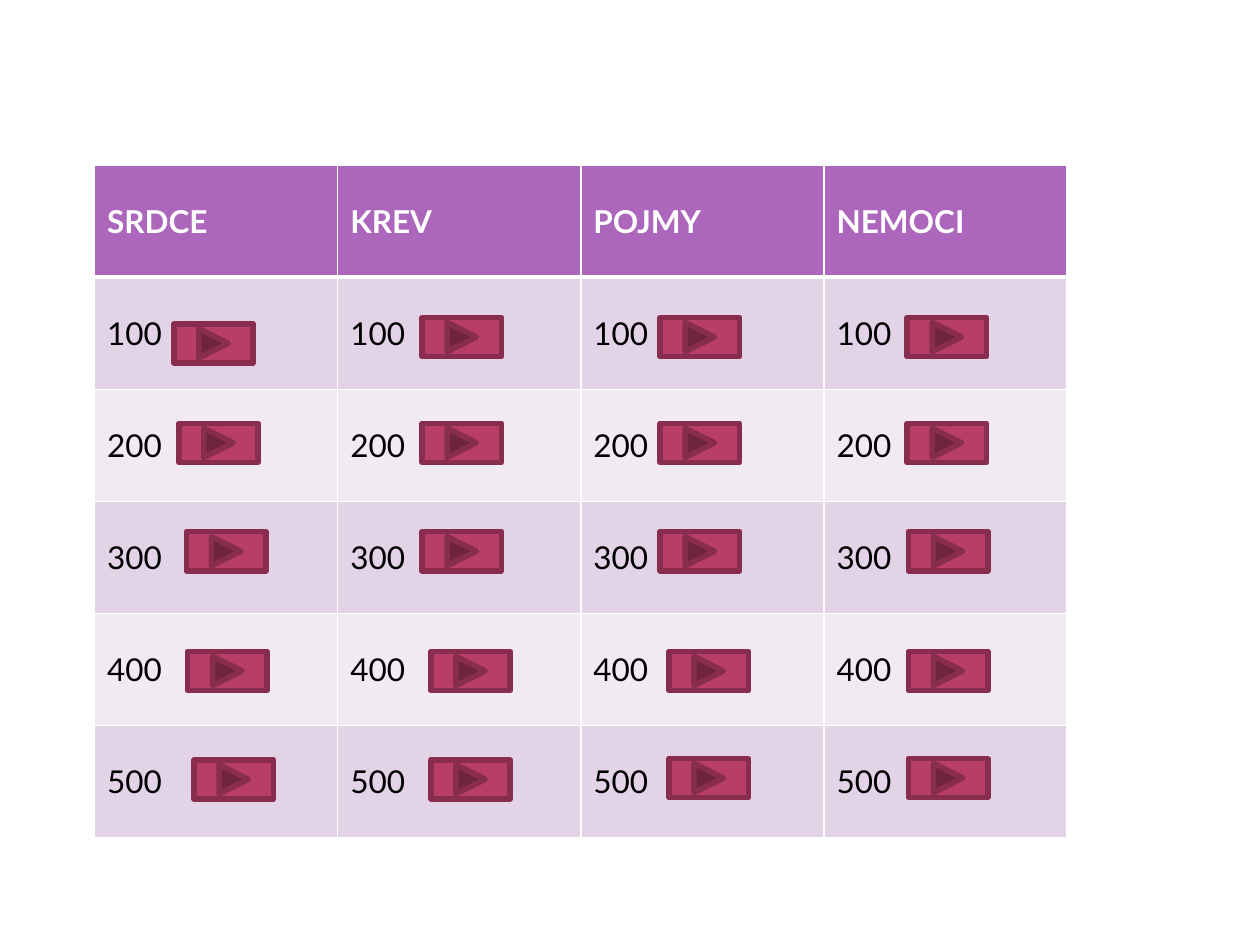
from lxml import etree
from pptx import Presentation
from pptx.dml.color import RGBColor
from pptx.enum.shapes import MSO_SHAPE
from pptx.enum.text import MSO_ANCHOR
from pptx.oxml.ns import qn
from pptx.util import Inches, Pt

FORWARD_BUTTON = MSO_SHAPE.ACTION_BUTTON_FORWARD_OR_NEXT
MIDDLE = MSO_ANCHOR.MIDDLE
BLANK_LAYOUT = 6

COLORS = {
    "header": "AC66BB",
    "band_dark": "E3D3E7",
    "band_light": "F1EAF3",
    "white": "FFFFFF",
    "black": "000000",
    "button": "B83D68",
    "button_line": "882D4D",
}
TOPICS = ["SRDCE", "KREV", "POJMY", "NEMOCI"]
POINTS = [100, 200, 300, 400, 500]
TABLE_LEFT, TABLE_TOP = 0.75, 1.31
COLUMN_WIDTH, ROW_HEIGHT = 1.93, 0.89
BUTTON_WIDTH, BUTTON_HEIGHT = 0.63, 0.31
BUTTON_LEFTS = [
    [1.38, 1.42, 1.48, 1.49, 1.54],
    [3.35, 3.35, 3.35, 3.42, 3.42],
    [5.24, 5.24, 5.24, 5.31, 5.31],
    [7.2, 7.2, 7.21, 7.21, 7.21],
]
BUTTON_TOPS = [
    [2.57, 3.36, 4.22, 5.17, 6.03],
    [2.52, 3.36, 4.22, 5.17, 6.03],
    [2.52, 3.36, 4.22, 5.17, 6.02],
    [2.52, 3.36, 4.22, 5.17, 6.02],
]


def color(name):
    """Return the named colour as an RGBColor."""
    return RGBColor.from_string(COLORS[name])


def set_borders(cell, widths):
    """Draw white borders of the given point widths, keyed by side."""
    properties = cell._tc.get_or_add_tcPr()
    for side, width in widths.items():
        line = etree.SubElement(properties, qn(f"a:ln{side}"), w=str(Pt(width)))
        fill = etree.SubElement(line, qn("a:solidFill"))
        etree.SubElement(fill, qn("a:srgbClr"), val=COLORS["white"])


def format_cell(cell, text, row):
    """Write and style one cell according to its row."""
    is_header = row == 0
    set_borders(cell, {"L": 1, "R": 1, "T": 3 if row == 1 else 1, "B": 3 if is_header else 1})
    band = "band_dark" if row % 2 else "band_light"
    cell.fill.solid()
    cell.fill.fore_color.rgb = color("header" if is_header else band)
    cell.vertical_anchor = MIDDLE
    cell.text = text
    font = cell.text_frame.paragraphs[0].runs[0].font
    for name, value in {"name": "Lato", "size": Pt(18), "bold": is_header}.items():
        setattr(font, name, value)
    font.color.rgb = color("white" if is_header else "black")


def add_score_table(slide):
    """Add the board with one column per topic and one row per score."""
    rows = [TOPICS] + [[str(score)] * len(TOPICS) for score in POINTS]
    table = slide.shapes.add_table(
        len(rows), len(TOPICS), Inches(TABLE_LEFT), Inches(TABLE_TOP),
        Inches(COLUMN_WIDTH * len(TOPICS)), Inches(ROW_HEIGHT * len(rows)),
    ).table
    table.horz_banding = False
    for row, texts in enumerate(rows):
        for column, text in enumerate(texts):
            format_cell(table.cell(row, column), text, row)


def add_button(slide, left, top):
    """Add one forward button."""
    shape = slide.shapes.add_shape(
        FORWARD_BUTTON, Inches(left), Inches(top), Inches(BUTTON_WIDTH), Inches(BUTTON_HEIGHT)
    )
    shape.shadow.inherit = False
    shape.fill.solid()
    shape.fill.fore_color.rgb = color("button")
    shape.line.color.rgb = color("button_line")
    shape.line.width = Pt(3.15)


def main():
    """Build the quiz board slide."""
    presentation = Presentation()
    presentation.slide_width, presentation.slide_height = Inches(10), Inches(7.5)
    slide = presentation.slides.add_slide(presentation.slide_layouts[BLANK_LAYOUT])
    add_score_table(slide)
    for lefts, tops in zip(BUTTON_LEFTS, BUTTON_TOPS):
        for left, top in zip(lefts, tops):
            add_button(slide, left, top)
    presentation.save("out.pptx")


if __name__ == "__main__":
    main()
